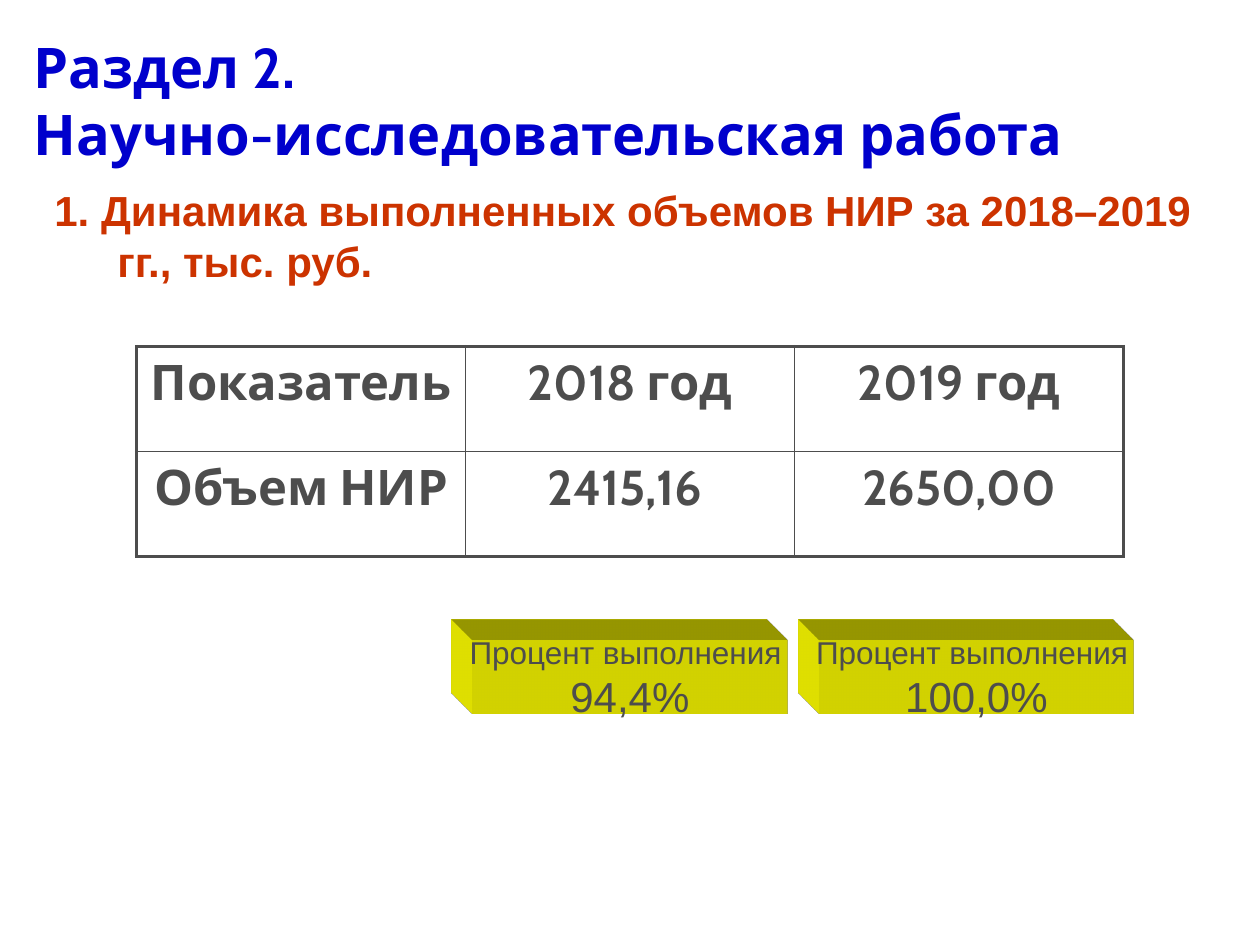
"""Build the research work slide: volume table and completion blocks."""
from lxml.etree import SubElement
from pptx import Presentation
from pptx.dml.color import RGBColor
from pptx.enum.shapes import MSO_SHAPE
from pptx.enum.text import MSO_ANCHOR, PP_ALIGN
from pptx.oxml.ns import qn
from pptx.util import Pt

HEADING = "Раздел 2. \vНаучно-исследовательская работа"
TOPIC = "1. Динамика выполненных объемов НИР за 2018–2019 гг., тыс. руб."
VOLUMES = [
    ["Показатель ", "2018 год", "2019 год"],
    ["Объем НИР", "2415,16 ", "2650,00"],
]
COMPLETION_LABEL = "Процент выполнения "
COMPLETION = ["94,4%", "100,0%"]

GRAY, YELLOW = "4D4D4D", "FFFF00"
BLOCK_LEFT, BLOCK_TOP, BLOCK_WIDTH, BLOCK_HEIGHT = 270, 366, 180, 42
BLOCK_STEP, DEPTH = 198, 33.87


def rgb(value):
    return RGBColor.from_string(value)


def style(paragraph, size, color, font="Arial", bold=False, align=None):
    paragraph.alignment = align
    for run in paragraph.runs:
        run.font.name, run.font.size, run.font.bold = font, Pt(size), bold
        run.font.color.rgb = rgb(color)


def place(part, left, top, width, height):
    part.left, part.top, part.width, part.height = map(Pt, (left, top, width, height))


def add_borders(cell, widths):
    properties = cell._tc.get_or_add_tcPr()
    for position, (side, width) in enumerate(widths.items()):
        line = SubElement(properties, qn(f"a:ln{side}"), w=str(Pt(width)))
        fill = SubElement(line, qn("a:solidFill"))
        SubElement(fill, qn("a:srgbClr"), val=GRAY)
        properties.insert(position, line)


def add_volumes(slide):
    rows, columns = len(VOLUMES), len(VOLUMES[0])
    frame = slide.shapes.add_table(rows, columns, Pt(78), Pt(198), Pt(564), Pt(120))
    table = frame.table
    table.first_row = table.horz_banding = False
    for r, values in enumerate(VOLUMES):
        for c, value in enumerate(values):
            cell = table.cell(r, c)
            cell.text_frame.text = value
            style(cell.text_frame.paragraphs[0], 28, GRAY, "Cabin", True, PP_ALIGN.CENTER)
            cell.fill.background()
            outer = {"L": c == 0, "R": c == columns - 1, "T": r == 0, "B": r == rows - 1}
            add_borders(cell, {side: 2.25 if edge else 1 for side, edge in outer.items()})


def extrude(shape, color):
    properties = shape._element.spPr
    scene = SubElement(properties, qn("a:scene3d"))
    SubElement(scene, qn("a:camera"), prst="legacyObliqueTopLeft")
    SubElement(scene, qn("a:lightRig"), rig="legacyFlat3", dir="b")
    solid = SubElement(properties, qn("a:sp3d"), extrusionH=str(Pt(DEPTH)),
                       prstMaterial="legacyMatte")
    extrusion = SubElement(solid, qn("a:extrusionClr"))
    SubElement(extrusion, qn("a:srgbClr"), val=color)


def add_block(slide, left, percent):
    block = slide.shapes.add_shape(
        MSO_SHAPE.RECTANGLE, Pt(left), Pt(BLOCK_TOP), Pt(BLOCK_WIDTH), Pt(BLOCK_HEIGHT))
    block.fill.solid()
    block.fill.fore_color.rgb = rgb(YELLOW)
    block.line.fill.background()
    block.shadow.inherit = False
    extrude(block, YELLOW)
    text = block.text_frame
    text.text = f"{COMPLETION_LABEL}\n{percent}"
    text.word_wrap = False
    text.vertical_anchor = MSO_ANCHOR.MIDDLE
    for paragraph, size in zip(text.paragraphs, (18, 24)):
        style(paragraph, size, GRAY, align=PP_ALIGN.CENTER)


def main():
    deck = Presentation()
    deck.slide_width, deck.slide_height = Pt(720), Pt(540)
    slide = deck.slides.add_slide(deck.slide_layouts[5])

    heading = slide.shapes.title
    place(heading, 12, 12, 642, 90)
    heading.text_frame.text = HEADING
    heading.text_frame.vertical_anchor = MSO_ANCHOR.MIDDLE
    style(heading.text_frame.paragraphs[0], 32, "0000CC", "Cabin", True, PP_ALIGN.LEFT)

    topic = slide.shapes.add_textbox(Pt(24), Pt(101.5), Pt(696), Pt(65.5)).text_frame
    topic.word_wrap = True
    topic.vertical_anchor = MSO_ANCHOR.MIDDLE
    topic.text = TOPIC
    indent = topic.paragraphs[0]._p.get_or_add_pPr()
    indent.set("marL", str(Pt(36)))
    indent.set("indent", str(Pt(-36)))
    style(topic.paragraphs[0], 24, "CC3300", bold=True)

    add_volumes(slide)
    for index, percent in enumerate(COMPLETION):
        add_block(slide, BLOCK_LEFT + index * BLOCK_STEP, percent)
    deck.save("out.pptx")


if __name__ == "__main__":
    main()
